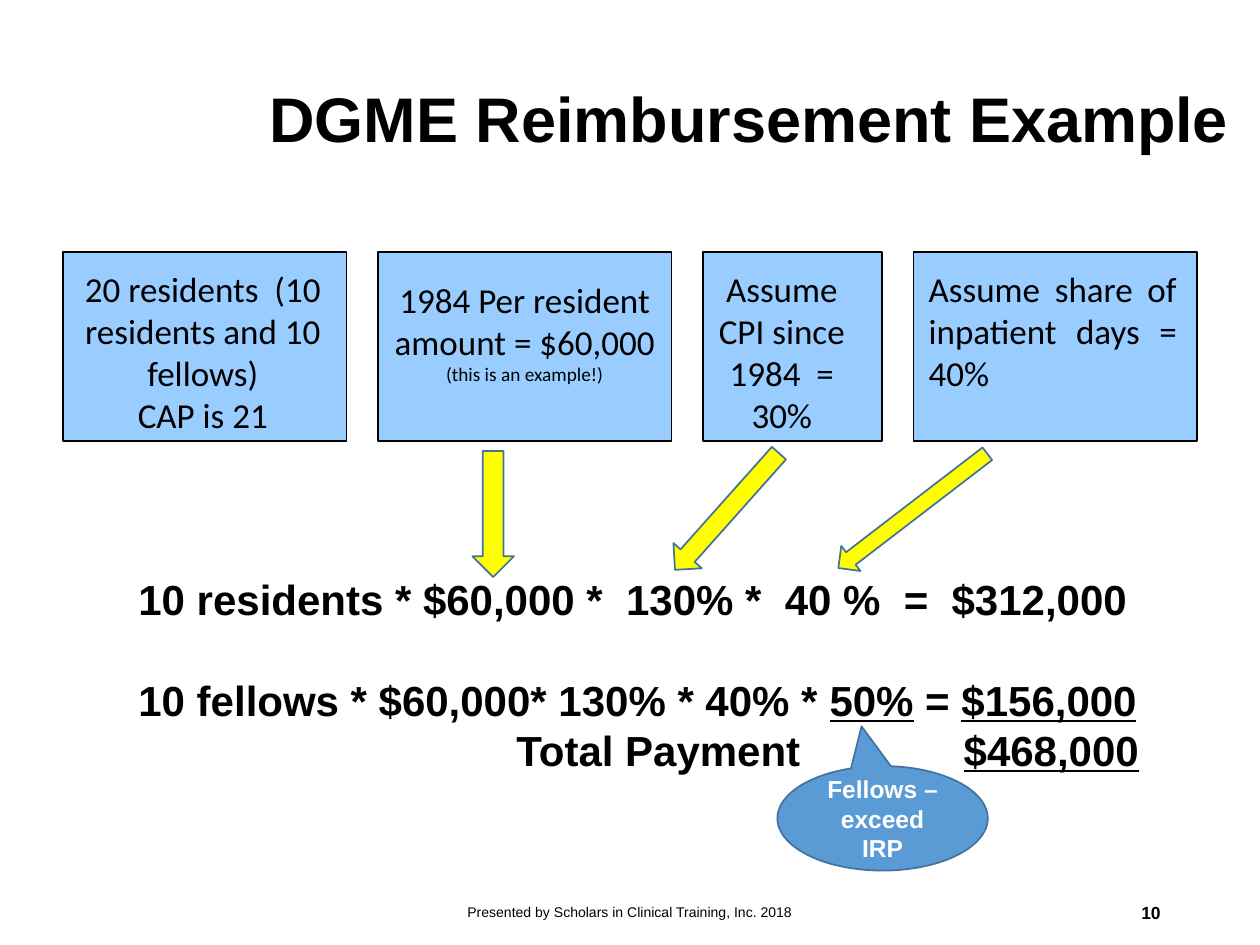
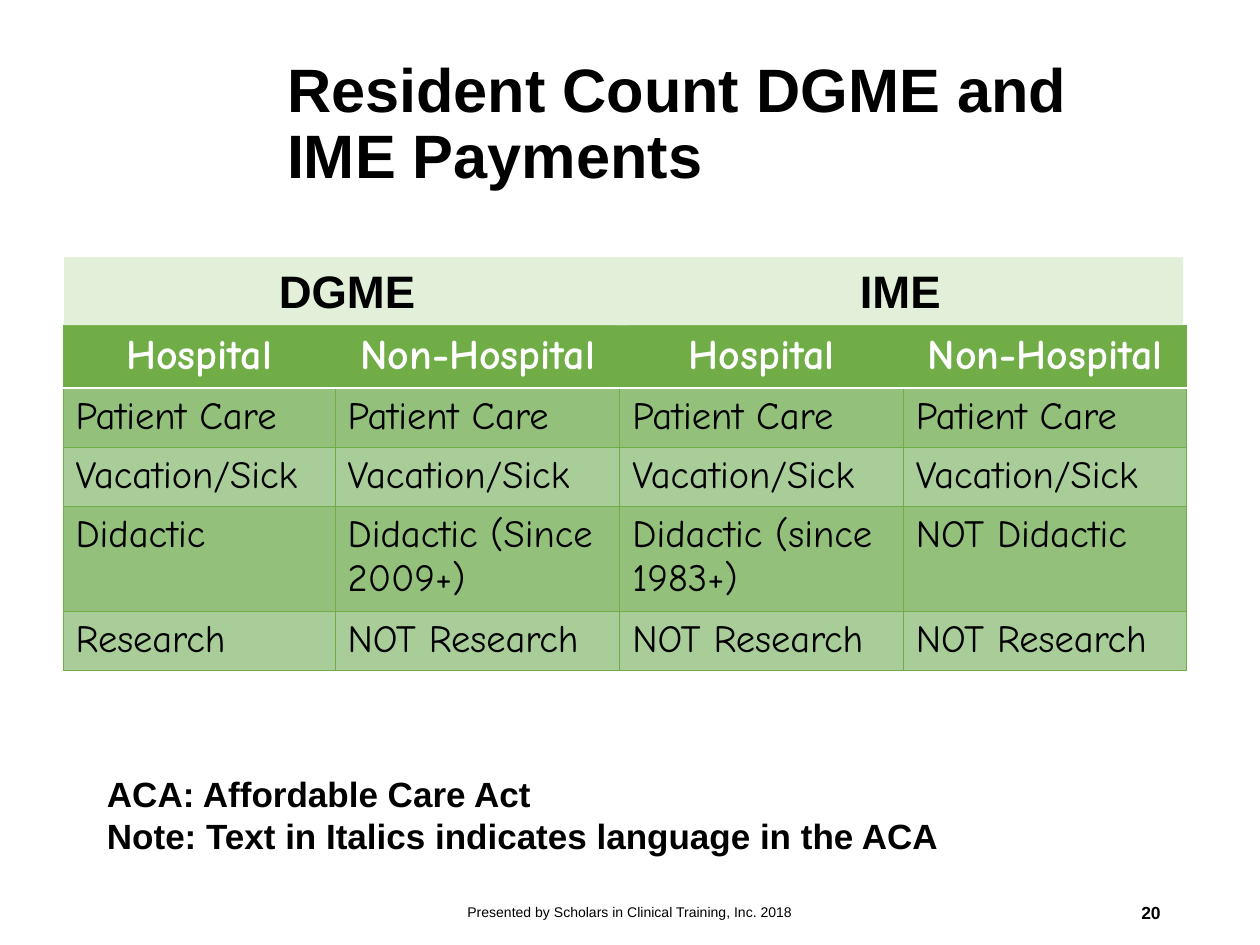
from lxml import etree
from pptx import Presentation
from pptx.dml.color import RGBColor
from pptx.enum.shapes import MSO_SHAPE
from pptx.enum.text import MSO_ANCHOR, PP_ALIGN
from pptx.oxml.ns import qn
from pptx.util import Emu, Pt

RECT = MSO_SHAPE.RECTANGLE
ARROW = MSO_SHAPE.DOWN_ARROW
BUBBLE = MSO_SHAPE.OVAL_CALLOUT
LEFT, CENTER, RIGHT = PP_ALIGN.LEFT, PP_ALIGN.CENTER, PP_ALIGN.RIGHT
FULL = PP_ALIGN.JUSTIFY
TOP, MIDDLE = MSO_ANCHOR.TOP, MSO_ANCHOR.MIDDLE

SCALE = 9144
BLACK, WHITE = "000000", "FFFFFF"
SKY, YELLOW, BLUE, EDGE = "99CCFF", "FFFF00", "5B9BD5", "43739E"
GREEN, DARK, LIGHT, PALE = "70AD47", "93C07B", "A9CD99", "E2F0D9"
SANS, BODY, COMIC = "Arial", "Calibri", "Comic Neue"
FOOTER = "Presented by Scholars in Clinical Training, Inc. 2018"


def px(n):
    return Emu(n * SCALE)


def color(code):
    return RGBColor.from_string(code)


def style(para, size, face=SANS, bold=False, tint=BLACK, align=LEFT):
    para.alignment = align
    for run in para.runs:
        font = run.font
        font.size, font.name, font.bold = Pt(size), face, bold
        font.color.rgb = color(tint)


def write(frame, text, size, anchor=TOP, inset=None, **look):
    frame.word_wrap = True
    frame.vertical_anchor = anchor
    if inset is not None:
        frame.margin_left = frame.margin_right = px(inset)
        frame.margin_top = frame.margin_bottom = px(inset)
    frame.text = text
    for para in frame.paragraphs:
        style(para, size, **look)


def label(slide, at, text, size, **look):
    box = slide.shapes.add_textbox(*map(px, at))
    write(box.text_frame, text, size, **look)
    return box.text_frame


def block(slide, kind, at, fill, edge=None, width=1, turn=0):
    shape = slide.shapes.add_shape(kind, *map(px, at))
    shape.shadow.inherit = False
    shape.fill.solid()
    shape.fill.fore_color.rgb = color(fill)
    if edge:
        shape.line.color.rgb = color(edge)
        shape.line.width = Pt(width)
    else:
        shape.line.fill.background()
    shape.rotation = turn
    return shape


def title(slide, at, text, size, **look):
    return label(slide, at, text, size, bold=True, **look)


def footer(slide, number):
    label(slide, (331, 704, 338, 40), FOOTER, 8, anchor=MIDDLE, align=CENTER)
    label(slide, (706, 704, 225, 40), str(number), 10, anchor=MIDDLE,
          align=RIGHT, bold=True)


def tabs(para, *stops):
    props = para._p.get_or_add_pPr()
    group = etree.SubElement(props, qn("a:tabLst"))
    for stop in stops:
        etree.SubElement(group, qn("a:tab"), pos=str(px(stop)), algn="l")


def formula(slide, at, lines):
    frame = label(slide, at, "", 24)
    for i, line in enumerate(lines):
        para = frame.add_paragraph() if i else frame.paragraphs[0]
        for j, part in enumerate(filter(None, line.split("|"))):
            run = para.add_run()
            run.text = part.strip("_")
            run.font.underline = part.startswith("_")
        if "\t" in line:
            tabs(para, 300, 655)
        style(para, 24, bold=True)
    frame.paragraphs[1].space_before = Pt(29)


def border(cell, side, tint, width):
    props = cell._tc.get_or_add_tcPr()
    line = etree.Element(qn("a:ln" + side), w=str(Pt(width)))
    fill = etree.SubElement(line, qn("a:solidFill"))
    etree.SubElement(fill, qn("a:srgbClr"), val=tint)
    props.insert("LRTB".index(side), line)


def grid(slide, at, cols, rows, data):
    table = slide.shapes.add_table(len(rows), len(cols), *map(px, at)).table
    for col, width in zip(table.columns, cols):
        col.width = px(width)
    for i, (row, high, texts) in enumerate(zip(table.rows, rows, data)):
        row.height = px(high)
        for cell, text in zip(row.cells, texts):
            cell.fill.solid()
            cell.fill.fore_color.rgb = color(
                GREEN if i == 0 else DARK if i % 2 else LIGHT)
            for side in "LRTB":
                white = (i, side) in ((0, "B"), (1, "T"))
                border(cell, side, WHITE if white else GREEN,
                       1 if white else 0.5)
            if i:
                write(cell.text_frame, text, 22, face=COMIC)
            else:
                write(cell.text_frame, text, 24, face=COMIC, bold=True,
                      tint=WHITE, align=CENTER)


def example(slide):
    for left, width in ((50, 225), (300, 233), (558, 142), (725, 225)):
        block(slide, RECT, (left, 200, width, 150), SKY, BLACK, 0.75)
    footer(slide, 10)
    title(slide, (200, 58, 789, 71), "DGME Reimbursement Example", 36,
          align=CENTER)
    formula(slide, (100, 450, 858, 205), (
        "10 residents * $60,000 *  130% *  40 %  =  $312,000",
        "10 fellows * $60,000* 130% * 40% * |_50%| = |_$156,000",
        "\tTotal Payment\t|_$468,000"))
    for at, turn in (((375, 358, 33, 100), 0), ((562, 344, 30, 124), 41.7),
                     ((712, 331, 25, 149), 52.5)):
        block(slide, ARROW, at, YELLOW, EDGE, turn=turn)
    bubble = block(slide, BUBBLE, (617, 608, 167, 83), BLUE, EDGE)
    bubble.adjustments[0], bubble.adjustments[1] = -0.1, -0.88
    write(bubble.text_frame, "Fellows – exceed IRP", 14, anchor=MIDDLE,
          bold=True, tint=WHITE, align=CENTER)
    facts = (
        ((50, 208, 222, 127),
         "20 residents  (10 residents and 10 fellows)\nCAP is 21", CENTER),
        ((300, 217, 233, 128),
         "1984 Per resident amount = $60,000\n(this is an example!)", CENTER),
        ((558, 208, 125, 75), "Assume CPI since 1984  = 30%", CENTER),
        ((733, 208, 205, 104), "Assume share of inpatient days = 40%", FULL))
    for at, text, align in facts:
        frame = label(slide, at, text, 20, face=BODY, align=align, inset=4)
        if "example" in text:
            style(frame.paragraphs[1], 11, face=BODY, align=align)


def count(slide):
    grid(slide, (50, 258, 892, 274), (216, 226, 225, 225),
         (50, 47, 47, 83, 47), (
             ("Hospital", "Non-Hospital") * 2,
             ("Patient Care",) * 4,
             ("Vacation/Sick",) * 4,
             ("Didactic", "Didactic (Since 2009+)",
              "Didactic (since 1983+)", "NOT Didactic"),
             ("Research",) + ("NOT Research",) * 3))
    frame = title(slide, (218, 27, 714, 145),
                  "Resident Count DGME and IME Payments", 35, anchor=MIDDLE)
    frame.paragraphs[0].line_spacing = 0.9
    for left, text in ((51, "DGME"), (490, "IME")):
        band = block(slide, RECT, (left, 204, 449, 54), PALE)
        write(band.text_frame, text, 26, bold=True, align=CENTER)
    label(slide, (75, 608, 855, 77), "ACA: Affordable Care Act\n"
          "Note: Text in Italics indicates language in the ACA", 20, bold=True)
    footer(slide, 20)


def main():
    deck = Presentation()
    deck.slide_width, deck.slide_height = px(1000), px(750)
    for draw in (example, count):
        draw(deck.slides.add_slide(deck.slide_layouts[6]))
    deck.save("out.pptx")


if __name__ == "__main__":
    main()
